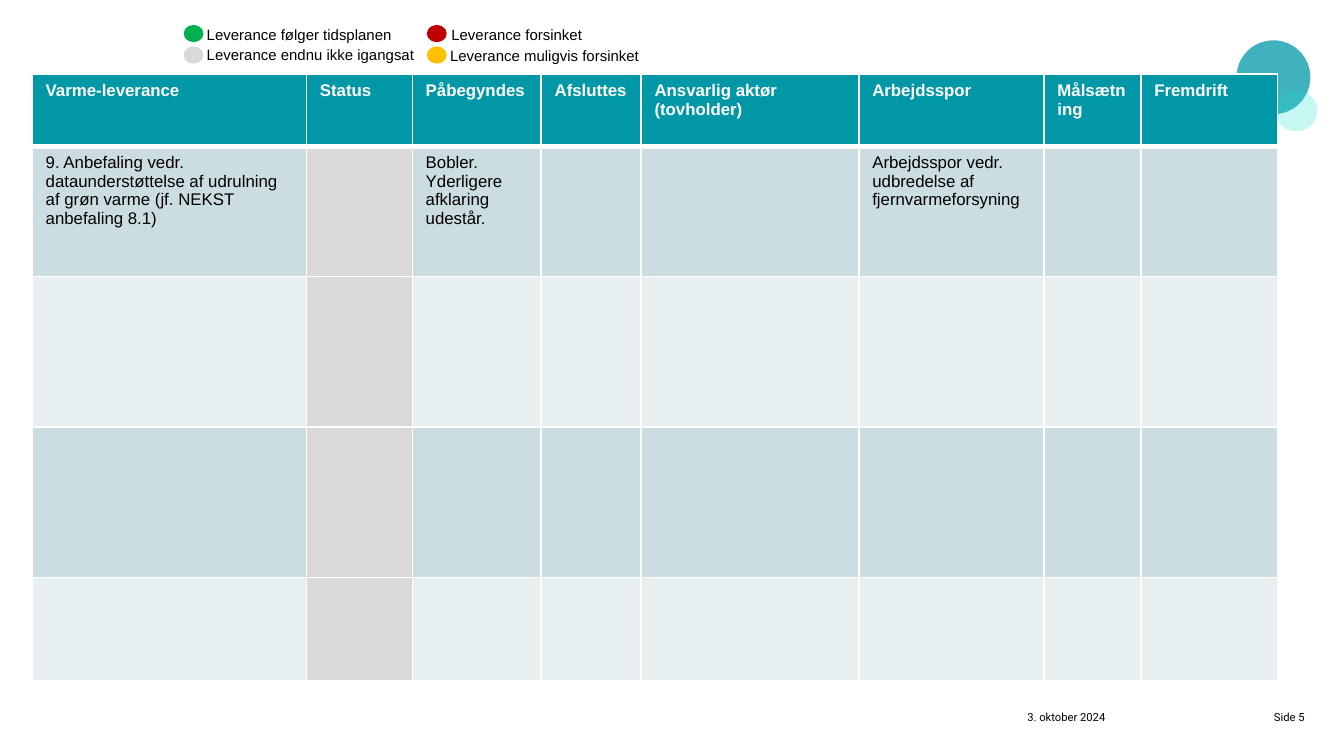
from lxml.etree import SubElement
from pptx import Presentation
from pptx.dml.color import RGBColor
from pptx.enum.shapes import MSO_SHAPE
from pptx.enum.text import MSO_AUTO_SIZE as AutoSize, PP_ALIGN as Align
from pptx.oxml.ns import qn
from pptx.util import Pt

BLACK, WHITE, TEAL, GREY = "000000", "FFFFFF", "0097A7", "D9D9D9"
BANDS = ["CCDDE1", "E7EFF1"]
STATUS_COLUMN = 1

DECORATIONS = [(662.4, 21.6, 39.6, TEAL, 75), (683.3, 48.2, 22.3, "1DE2CD", 25)]
LEGEND = [
    ("Leverance følger tidsplanen", "00B050", 99.4, 14.4, 103.7, 10.1, 115.2),
    ("Leverance endnu ikke igangsat", GREY, 99.4, 25.9, 103.7, 20.9, 127.4),
    ("Leverance forsinket", "C00000", 229.7, 14.4, 234.7, 10.1, 87.8),
    ("Leverance muligvis forsinket", "FFC000", 229.7, 25.9, 234, 21.6, 116.6),
]
FOOTER = [
    ("3. oktober 2024", 543.6, 97.2, Align.LEFT),
    ("Side 5", 642.2, 63.4, Align.RIGHT),
]
COLUMNS = [
    ("Varme-leverance", 146.9),
    ("Status", 56.7),
    ("Påbegyndes", 69.1),
    ("Afsluttes", 53.5),
    ("Ansvarlig aktør (tovholder)", 116.7),
    ("Arbejdsspor", 99.2),
    ("Målsætning", 51.9),
    ("Fremdrift", 73.3),
]
ROW_HEIGHTS = [38.6, 69.8, 80.6, 80.6, 55.6]
DELIVERY = {
    0: "9. Anbefaling vedr. dataunderstøttelse af udrulning af grøn varme (jf. NEKST anbefaling 8.1)",
    2: "Bobler. Yderligere afklaring udestår.",
    5: "Arbejdsspor vedr. udbredelse af fjernvarmeforsyning",
}


def color(value):
    return RGBColor.from_string(value)


def add_run(paragraph, text, size, font="Arial", ink=BLACK, bold=False):
    run = paragraph.add_run()
    run.text = text
    run.font.size, run.font.name, run.font.bold = Pt(size), font, bold
    run.font.color.rgb = color(ink)


def add_ellipse(slide, left, top, width, height, fill):
    shape = slide.shapes.add_shape(MSO_SHAPE.OVAL, Pt(left), Pt(top), Pt(width), Pt(height))
    shape.shadow.inherit = False
    shape.fill.solid()
    shape.fill.fore_color.rgb = color(fill)
    return shape


def add_decorations(slide):
    for left, top, size, fill, opacity in DECORATIONS:
        shape = add_ellipse(slide, left, top, size, size, fill)
        shape.line.fill.background()
        tint = shape.fill._xPr.find(qn("a:solidFill"))[0]
        SubElement(tint, qn("a:alpha"), val=str(opacity * 1000))


def add_legend(slide):
    for label, fill, left, top, text_left, text_top, width in LEGEND:
        shape = add_ellipse(slide, left, top, 8.6, 7.2, fill)
        shape.line.color.rgb = color(fill)
        shape.line.width = Pt(2)
        box = slide.shapes.add_textbox(Pt(text_left), Pt(text_top), Pt(width), Pt(17.3))
        frame = box.text_frame
        frame.word_wrap = False
        frame.auto_size = AutoSize.SHAPE_TO_FIT_TEXT
        add_run(frame.paragraphs[0], label, 8)


def add_footer(slide):
    for text, left, width, alignment in FOOTER:
        frame = slide.shapes.add_textbox(Pt(left), Pt(377.3), Pt(width), Pt(21.6)).text_frame
        frame.word_wrap = True
        frame.margin_left = frame.margin_right = Pt(6.75)
        frame.margin_top = frame.margin_bottom = Pt(3.38)
        frame.paragraphs[0].alignment = alignment
        add_run(frame.paragraphs[0], text, 6, "Roboto")


def set_borders(cell, row):
    properties = cell._tc.get_or_add_tcPr()
    widths = {"L": 1, "R": 1, "T": 3 if row == 1 else 1, "B": 3 if row == 0 else 1}
    for index, (side, width) in enumerate(widths.items()):
        line = properties.makeelement(qn("a:ln" + side), {"w": str(Pt(width))})
        SubElement(SubElement(line, qn("a:solidFill")), qn("a:srgbClr"), val=WHITE)
        properties.insert(index, line)


def cell_fill(row, column):
    if row == 0:
        return TEAL
    return GREY if column == STATUS_COLUMN else BANDS[(row - 1) % 2]


def add_deliveries(slide):
    width = sum(width for _, width in COLUMNS)
    table = slide.shapes.add_table(
        len(ROW_HEIGHTS), len(COLUMNS), Pt(17.3), Pt(39.8), Pt(width), Pt(sum(ROW_HEIGHTS))
    ).table
    for column, (_, width) in enumerate(COLUMNS):
        table.columns[column].width = Pt(width)
    for row, height in enumerate(ROW_HEIGHTS):
        table.rows[row].height = Pt(height)
        for column, (heading, _) in enumerate(COLUMNS):
            cell = table.cell(row, column)
            cell.fill.solid()
            cell.fill.fore_color.rgb = color(cell_fill(row, column))
            set_borders(cell, row)
            paragraph = cell.text_frame.paragraphs[0]
            if row == 0:
                add_run(paragraph, heading, 9, ink=WHITE, bold=True)
            elif row == 1 and column in DELIVERY:
                add_run(paragraph, DELIVERY[column], 9)


def main():
    """Build the status slide for the heat deliveries."""
    presentation = Presentation()
    presentation.slide_width, presentation.slide_height = Pt(720), Pt(405)
    slide = presentation.slides.add_slide(presentation.slide_layouts[6])
    add_decorations(slide)
    add_footer(slide)
    add_legend(slide)
    add_deliveries(slide)
    presentation.save("out.pptx")


if __name__ == "__main__":
    main()
